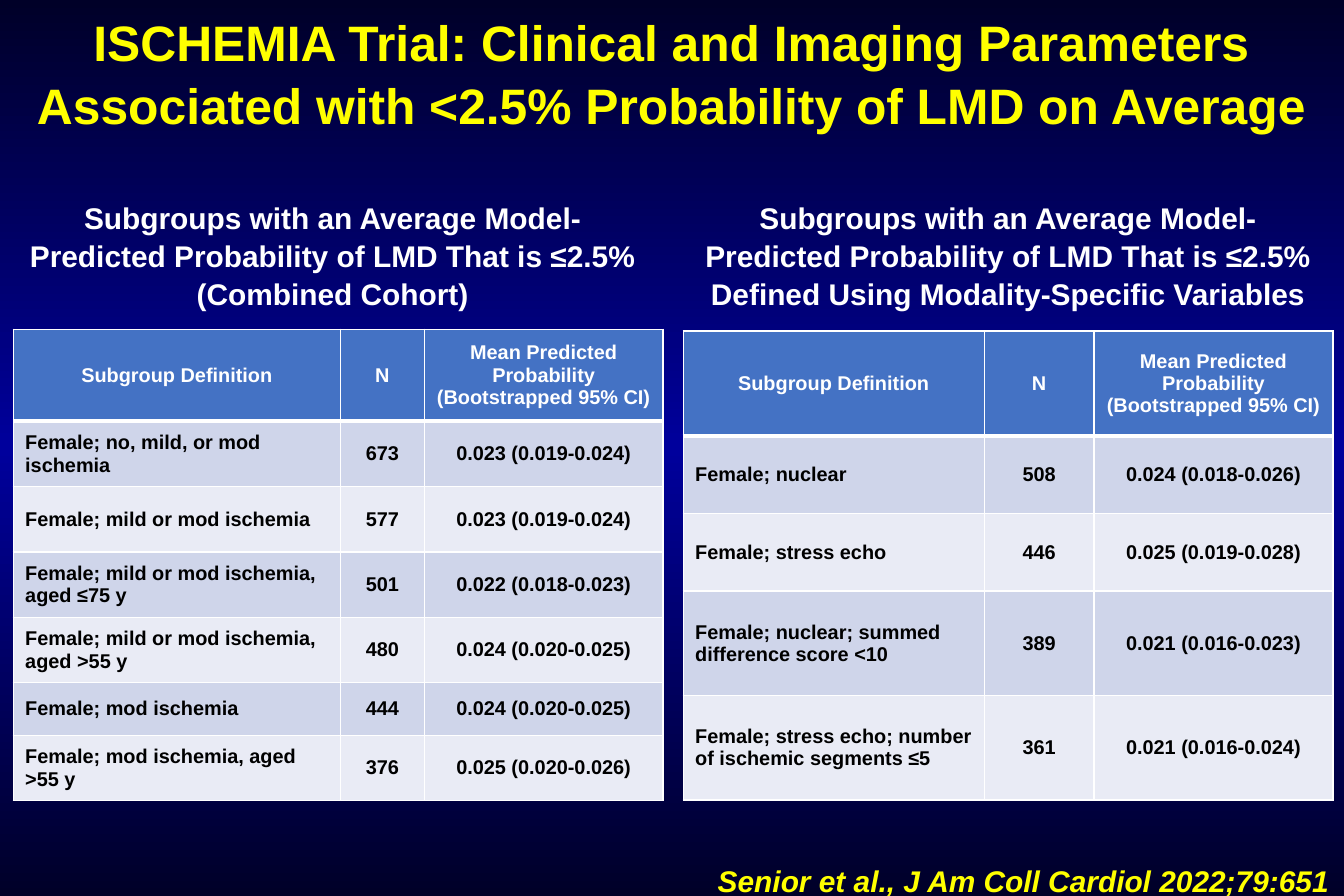
from copy import deepcopy

from lxml.etree import SubElement
from pptx import Presentation
from pptx.dml.color import RGBColor
from pptx.enum.text import MSO_ANCHOR, PP_ALIGN
from pptx.oxml.ns import qn
from pptx.util import Pt

WHITE, BLACK, YELLOW = "FFFFFF", "000000", "FFFF00"
HEADER_FILL, BANDS = "4472C4", ("CFD5EA", "E9EBF5")


def rgb(value):
    return RGBColor.from_string(value)


def write(frame, lines, size, color, align, spacing=None, italic=None):
    for index, line in enumerate(lines):
        paragraph = frame.add_paragraph() if index else frame.paragraphs[0]
        paragraph.alignment = align
        paragraph.line_spacing = spacing
        run = paragraph.add_run()
        run.text = line
        run.font.name, run.font.size = "Arial", Pt(size)
        run.font.bold, run.font.italic = True, italic
        run.font.color.rgb = rgb(color)


deck = Presentation()
deck.slide_width, deck.slide_height = Pt(810), Pt(540)
slide = deck.slides.add_slide(deck.slide_layouts[6])

# Background: dark blue, brighter in the middle
backdrop = slide.background.fill
backdrop.gradient()
backdrop.gradient_angle = 90
stop_list = next(slide.element.iter(qn("a:gsLst")))
stop_list.insert(1, deepcopy(stop_list[0]))
for stop, (position, color) in zip(
        backdrop.gradient_stops, [(0, "000028"), (0.5, "00009C"), (1, "000028")]):
    stop.position = position
    stop.color.rgb = rgb(color)

# Title, citation and the two table headings
CENTER, LEFT = PP_ALIGN.CENTER, PP_ALIGN.LEFT
captions = [
    ((0, 2, 810, 80), 30, YELLOW, CENTER, None,
     ["ISCHEMIA Trial: Clinical and Imaging Parameters "
      "Associated with <2.5% Probability of LMD on Average"]),
    ((425.5, 515, 384.5, 29), 18, YELLOW, LEFT, True,
     ["Senior et al., J Am Coll Cardiol 2022;79:651"]),
    ((8, 116, 385, 73), 18, WHITE, CENTER, None,
     ["Subgroups with an Average Model-Predicted Probability of LMD That is ≤2.5%",
      "(Combined Cohort)"]),
    ((415.5, 116, 384, 73), 18, WHITE, CENTER, None,
     ["Subgroups with an Average Model-Predicted Probability of LMD That is ≤2.5% "
      "Defined Using Modality-Specific Variables"]),
]
for place, size, color, align, italic, lines in captions:
    frame = slide.shapes.add_textbox(*map(Pt, place)).text_frame
    frame.word_wrap = True
    write(frame, lines, size, color, align, 1.05, italic)

# Subgroup tables
header = ("Subgroup Definition", "N", "Mean Predicted Probability\n(Bootstrapped 95% CI)")
combined_cohort = [
    ("Female; no, mild, or mod ischemia", "673", "0.023 (0.019-0.024)"),
    ("Female; mild or mod ischemia", "577", "0.023 (0.019-0.024)"),
    ("Female; mild or mod ischemia, aged ≤75 y", "501", "0.022 (0.018-0.023)"),
    ("Female; mild or mod ischemia, aged >55 y", "480", "0.024 (0.020-0.025)"),
    ("Female; mod ischemia", "444", "0.024 (0.020-0.025)"),
    ("Female; mod ischemia, aged >55 y", "376", "0.025 (0.020-0.026)"),
]
modality_specific = [
    ("Female; nuclear", "508", "0.024 (0.018-0.026)"),
    ("Female; stress echo", "446", "0.025 (0.019-0.028)"),
    ("Female; nuclear; summed difference score <10", "389", "0.021 (0.016-0.023)"),
    ("Female; stress echo; number of ischemic segments ≤5", "361", "0.021 (0.016-0.024)"),
]
subgroup_tables = [
    (8, 198.5, (197.3, 50.4, 144), (55.4, 39.4, 39.4, 39.4, 39.4, 31.8, 39.4), combined_cohort),
    (411.8, 199.5, (181.4, 66.2, 144), (63.4, 46.7, 46.7, 63, 63), modality_specific),
]
for left, top, widths, heights, subgroups in subgroup_tables:
    table = slide.shapes.add_table(
        len(heights), len(widths), Pt(left), Pt(top), Pt(sum(widths)), Pt(sum(heights))).table
    for column, width in zip(table.columns, widths):
        column.width = Pt(width)
    for row, height in zip(table.rows, heights):
        row.height = Pt(height)
    for r, values in enumerate([header] + subgroups):
        for c, value in enumerate(values):
            cell = table.cell(r, c)
            cell.vertical_anchor = MSO_ANCHOR.MIDDLE
            write(cell.text_frame, value.split("\n"), 12, BLACK if r else WHITE,
                  LEFT if r and c == 0 else CENTER)
            # Borders go before the fill in the cell properties
            properties = cell._tc.get_or_add_tcPr()
            for side in ("lnL", "lnR", "lnT", "lnB"):
                weight = 3 if r == 0 and side == "lnB" else 1
                border = SubElement(properties, qn("a:" + side), w=str(Pt(weight)))
                SubElement(SubElement(border, qn("a:solidFill")), qn("a:srgbClr"), val=WHITE)
            cell.fill.solid()
            cell.fill.fore_color.rgb = rgb(BANDS[(r - 1) % 2] if r else HEADER_FILL)

deck.save("out.pptx")
